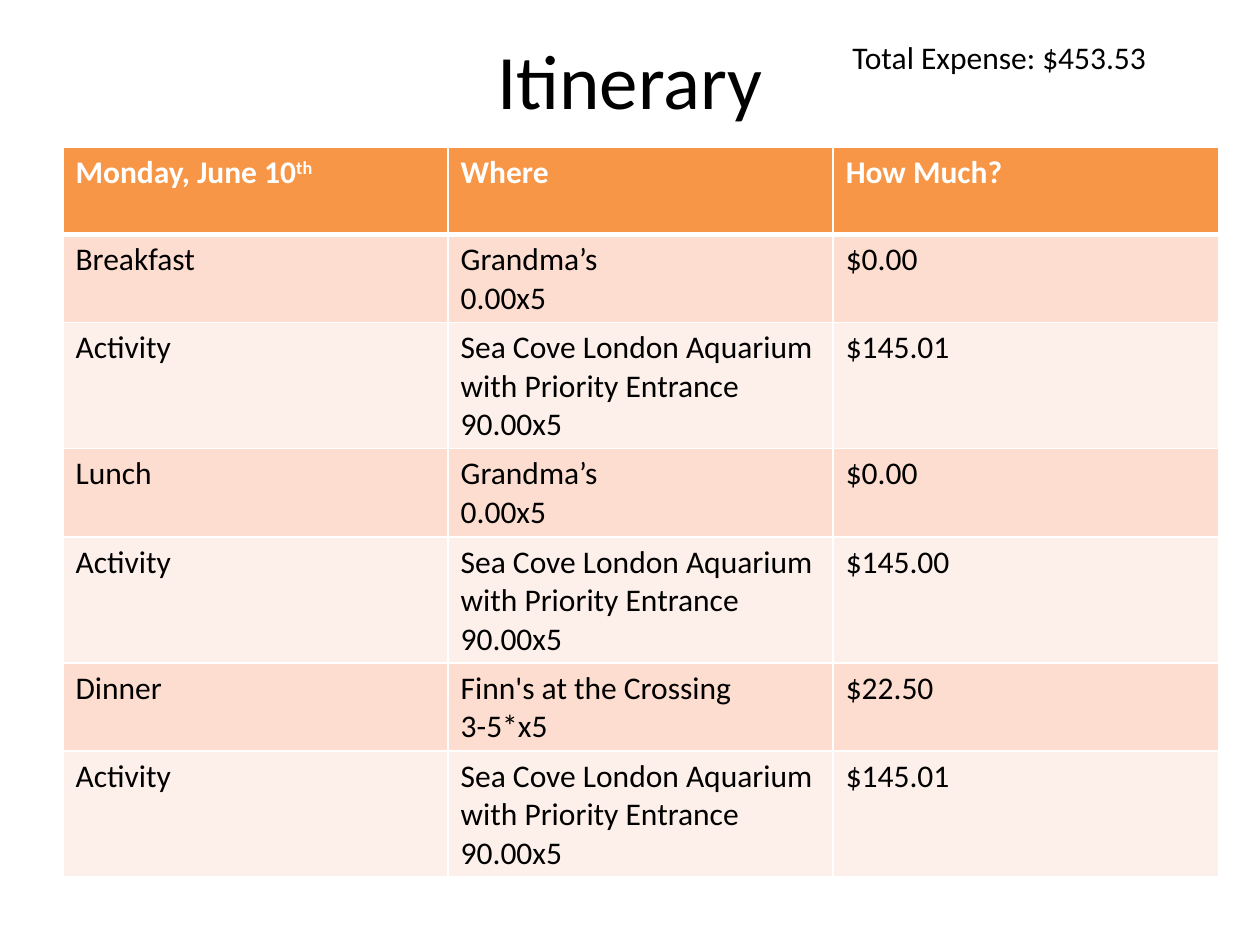
from lxml.etree import SubElement
from pptx import Presentation
from pptx.dml.color import RGBColor
from pptx.enum.text import MSO_ANCHOR, PP_ALIGN
from pptx.oxml.ns import qn
from pptx.util import Inches, Pt

COLORS = {"text": "000000", "white": "FFFFFF", "header": "F79646",
          "odd": "FCDDCF", "even": "FDEFE9"}
FONT = "Calibri"
TITLE = "Itinerary"
TOTAL = "Total Expense: $453.53"
HEADER = ["Monday, June 10^th", "Where", "How Much?"]
HOME = ["Grandma’s", "0.00x5"]
AQUARIUM = ["Sea Cove London Aquarium with Priority Entrance", "90.00x5"]
DINER = ["Finn's at the Crossing", "3-5*x5"]
PLANS = [
    ("Breakfast", HOME, "$0.00"),
    ("Activity", AQUARIUM, "$145.01"),
    ("Lunch", HOME, "$0.00"),
    ("Activity", AQUARIUM, "$145.00"),
    ("Dinner", DINER, "$22.50"),
    ("Activity", AQUARIUM, "$145.01"),
]
WIDTH, HEIGHT = Inches(10), Inches(7.5)
MARGIN = Inches(0.5)
TABLE_TOP, TABLE_WIDTH, ROW_HEIGHT = Inches(1.17), Inches(9.17), Inches(0.69)


def add_run(p, text, size=18, color="text", bold=False):
    r = p.add_run()
    r.text = text
    r.font.name, r.font.size, r.font.bold = FONT, Pt(size), bold
    r.font.color.rgb = RGBColor.from_string(COLORS[color])
    return r


def set_borders(cell, bottom):
    tc_pr = cell._tc.get_or_add_tcPr()
    for side, width in (("L", 1), ("R", 1), ("T", 1), ("B", bottom)):
        ln = SubElement(tc_pr, qn(f"a:ln{side}"), w=str(Pt(width)))
        fill = SubElement(ln, qn("a:solidFill"))
        SubElement(fill, qn("a:srgbClr"), val=COLORS["white"])


def fill_cell(cell, content, is_header, fill):
    set_borders(cell, 3 if is_header else 1)
    cell.fill.solid()
    cell.fill.fore_color.rgb = RGBColor.from_string(COLORS[fill])
    tf = cell.text_frame
    lines = [content] if isinstance(content, str) else content
    for i, line in enumerate(lines):
        p = tf.add_paragraph() if i else tf.paragraphs[0]
        base, _, raised = line.partition("^")
        color = "white" if is_header else "text"
        add_run(p, base, color=color, bold=is_header)
        if raised:
            r = add_run(p, raised, color=color, bold=is_header)
            r.font._element.set("baseline", "30000")


def main():
    prs = Presentation()
    prs.slide_width, prs.slide_height = WIDTH, HEIGHT
    s = prs.slides.add_slide(prs.slide_layouts[5])

    title = s.shapes.title
    title.left, title.top = MARGIN, 0
    title.width, title.height = WIDTH - 2 * MARGIN, Inches(1.25)
    title.text_frame.vertical_anchor = MSO_ANCHOR.MIDDLE
    p = title.text_frame.paragraphs[0]
    p.alignment = PP_ALIGN.CENTER
    add_run(p, TITLE, size=44)

    total = s.shapes.add_textbox(WIDTH * 2 // 3, Inches(0.25), Inches(3.08), Inches(0.4))
    total.text_frame.word_wrap = True
    add_run(total.text_frame.paragraphs[0], TOTAL)

    rows = [HEADER, *PLANS]
    table = s.shapes.add_table(len(rows), len(HEADER), MARGIN, TABLE_TOP,
                               TABLE_WIDTH, ROW_HEIGHT * len(rows)).table
    for i, row in enumerate(rows):
        fill = "header" if i == 0 else "odd" if i % 2 else "even"
        for j, content in enumerate(row):
            fill_cell(table.cell(i, j), content, i == 0, fill)

    prs.save("out.pptx")


if __name__ == "__main__":
    main()
